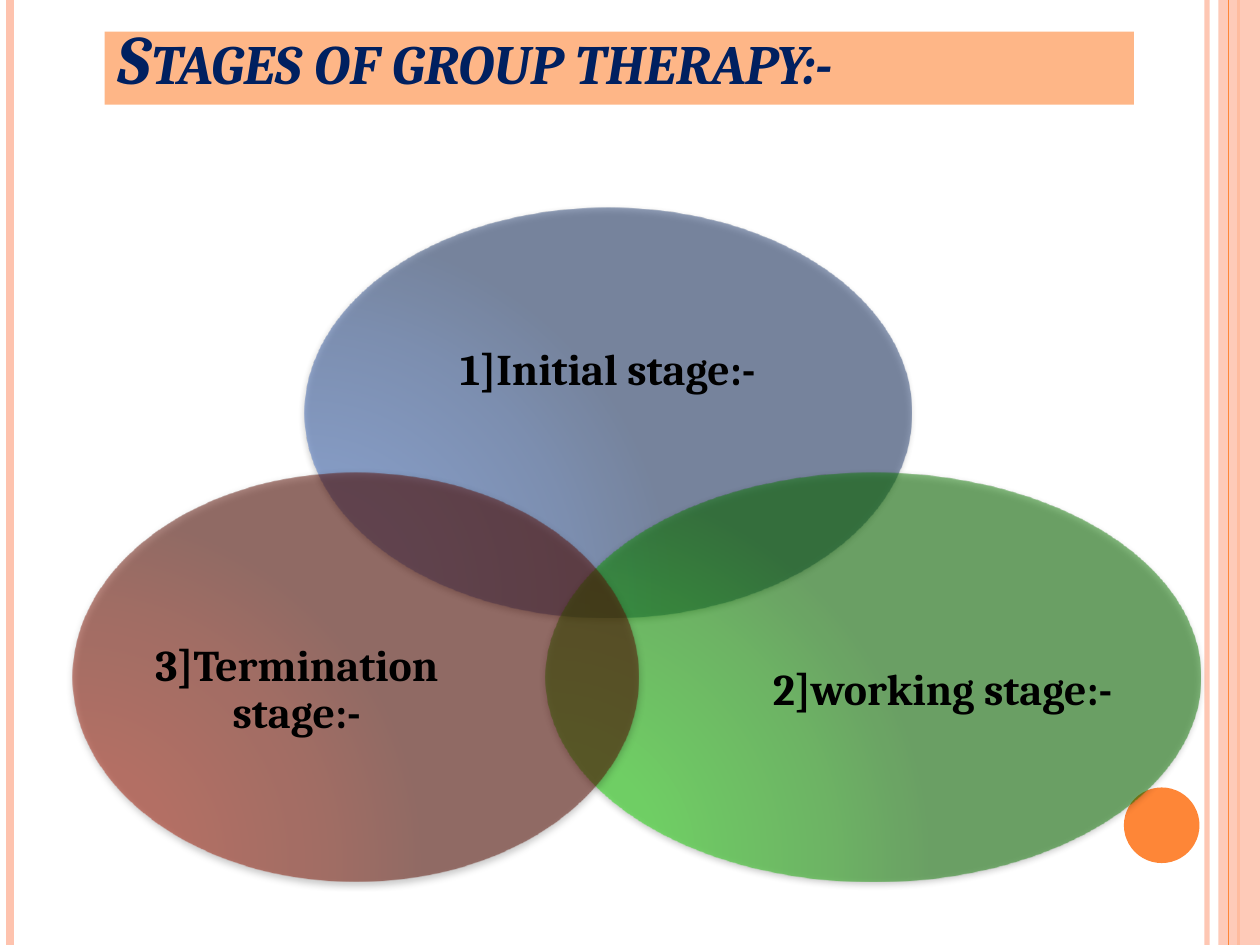
import pptx
import pptx.dml.color
import pptx.enum.shapes
import pptx.enum.text
import pptx.oxml
import pptx.oxml.ns
import pptx.util
from pptx.util import Inches

COLORS = {
    "peach": "FEC3AE", "orange": "FE8637", "banner": "FEB687",
    "navy": "002060", "black": "000000",
}
STOPS = (0, 30, 75, 100)
BLUES = ("4574CC", "4370C5", "2F5397", "233E70")
GREENS = ("17DB00", "16D300", "119E00", "0C7500")
REDS = ("A41700", "9F1600", "771100", "580C00")
FONT = "Cambria"
NS = pptx.oxml.ns.nsdecls("a")
OVAL = pptx.enum.shapes.MSO_SHAPE.OVAL
RECTANGLE = pptx.enum.shapes.MSO_SHAPE.RECTANGLE
ANCHOR = pptx.enum.text.MSO_ANCHOR
ALIGN = pptx.enum.text.PP_ALIGN


def rgb(name):
    return pptx.dml.color.RGBColor.from_string(COLORS[name])


def xml(text):
    return pptx.oxml.parse_xml(text)


class StagePage:
    def __init__(self, deck):
        self.page = deck.slides.add_slide(deck.slide_layouts[5])
        self.shapes = self.page.shapes

    def set_alpha(self, fill_element, percent):
        color = fill_element.find(".//" + pptx.oxml.ns.qn("a:srgbClr"))
        color.append(xml(f'<a:alpha {NS} val="{percent * 1000}"/>'))

    def add_label(self, shape, text, anchor, align, margins, style, spacing=None):
        frame = shape.text_frame
        settings = {"word_wrap": True, "vertical_anchor": anchor,
                    "auto_size": pptx.enum.text.MSO_AUTO_SIZE.NONE}
        sides = ("margin_left", "margin_top", "margin_right", "margin_bottom")
        settings.update(zip(sides, map(Inches, margins)))
        for name, value in settings.items():
            setattr(frame, name, value)
        para = frame.paragraphs[0]
        para.alignment = align
        para.line_spacing = spacing
        span = para.add_run()
        span.text = text
        for name, value in style.items():
            setattr(span.font, name, value)
        return span

    def title(self, text, *place):
        box = self.shapes.title
        box.left, box.top, box.width, box.height = map(Inches, place)
        box.fill.solid()
        box.fill.fore_color.rgb = rgb("banner")
        style = {"name": FONT, "size": pptx.util.Pt(39.6), "bold": True, "italic": True}
        span = self.add_label(box, text, ANCHOR.BOTTOM, ALIGN.LEFT,
                              (0.1, 0.05, 0.1, 0.05), style)
        span.font.color.rgb = rgb("navy")
        span.font._element.set("cap", "small")

    def rule(self, x, color, width, alpha=None):
        line = self.shapes.add_connector(
            pptx.enum.shapes.MSO_CONNECTOR.STRAIGHT,
            Inches(x), Inches(0), Inches(x), Inches(7.5))
        line.line.color.rgb = rgb(color)
        line.line.width = pptx.util.Pt(width)
        properties = line._element.spPr
        properties.append(xml(f"<a:effectLst {NS}/>"))
        if alpha:
            self.set_alpha(properties, alpha)

    def shape(self, kind, place, color=None, alpha=None):
        shape = self.shapes.add_shape(kind, *map(Inches, place))
        shape.shadow.inherit = False
        shape.line.fill.background()
        if color:
            shape.fill.solid()
            shape.fill.fore_color.rgb = rgb(color)
        if alpha:
            self.set_alpha(shape._element.spPr, alpha)
        return shape

    def stage(self, text, place, text_place, shades):
        oval = self.shape(OVAL, place)
        properties = oval._element.spPr
        stops = "".join(
            f'<a:gs pos="{stop * 1000}"><a:srgbClr val="{shade}">'
            '<a:alpha val="50000"/></a:srgbClr></a:gs>'
            for stop, shade in zip(STOPS, shades))
        properties.insert(2, xml(
            f'<a:gradFill {NS} rotWithShape="1"><a:gsLst>{stops}</a:gsLst>'
            '<a:path path="circle"><a:fillToRect l="5000" t="100000" '
            'r="120000" b="10000"/></a:path></a:gradFill>'))
        effects = properties.find(pptx.oxml.ns.qn("a:effectLst"))
        effects.append(xml(
            f'<a:outerShdw {NS} blurRad="{pptx.util.Pt(4)}" dist="{pptx.util.Pt(1.6)}" '
            'dir="5400000" rotWithShape="0"><a:srgbClr val="000000">'
            '<a:alpha val="42000"/></a:srgbClr></a:outerShdw>'))

        box = self.shapes.add_textbox(*map(Inches, text_place))
        style = {"name": FONT, "size": pptx.util.Pt(25), "bold": True}
        span = self.add_label(box, text, ANCHOR.MIDDLE, ALIGN.CENTER,
                              (0, 0, 0, 0), style, 0.9)
        span.font.color.rgb = rgb("black")


def main():
    deck = pptx.Presentation()
    deck.slide_width, deck.slide_height = Inches(10), Inches(7.5)
    stages = StagePage(deck)

    # Side stripes and corner dot
    stages.rule(9.58, "peach", 3, 93)
    stages.rule(0.08, "peach", 4.5)
    stages.rule(9.83, "orange", 1.5)
    stages.shape(RECTANGLE, (9.67, 0, 0.33, 7.5), "peach", 87)
    stages.rule(9.75, "orange", 0.75)
    stages.shape(OVAL, (8.92, 6.25, 0.6, 0.6), "orange")

    # Title banner
    stages.title("Stages of group therapy:-", 0.83, 0.25, 8.17, 0.58)

    # Overlapping stages
    stages.stage("1]Initial stage:-", (2.42, 1.65, 4.81, 3.25),
                 (3.06, 2.22, 3.53, 1.46), BLUES)
    stages.stage("2]working stage:-", (4.33, 3.75, 5.2, 3.25),
                 (5.92, 4.59, 3.12, 1.79), GREENS)
    stages.stage("3]Termination stage:-", (0.58, 3.75, 4.49, 3.25),
                 (1.01, 4.59, 2.69, 1.79), REDS)

    deck.save("out.pptx")


if __name__ == "__main__":
    main()
